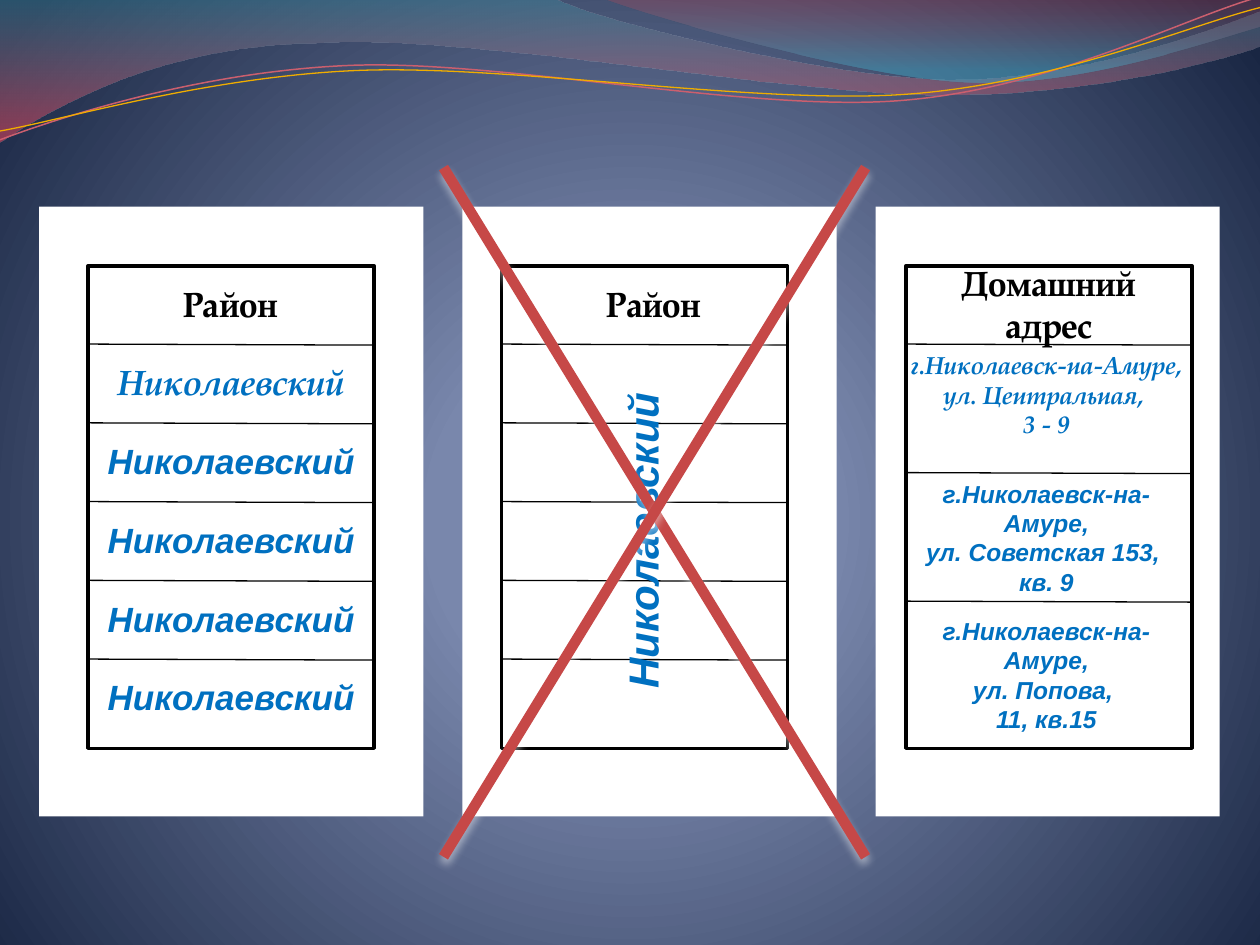
from typing import NamedTuple

import pptx
import pptx.dml.color
import pptx.enum.shapes
import pptx.enum.text
import pptx.oxml
import pptx.oxml.ns
import pptx.util

GRID_COLUMNS, GRID_ROWS = 100, 75
CELL = pptx.util.Inches(0.1)
SERIF, SANS = "TeX Gyre Pagella", "Arial"
BLACK, WHITE, BLUE, RED = "000000", "FFFFFF", "0070C0", "C64847"
DISTRICT = "Николаевский"
TABLE_TOP, TABLE_WIDTH, TABLE_HEIGHT = 21.1, 22.7, 38.3
ROW = 6.25
ADDRESS_ROW = 10.2
RULE_TILT = 0.04
DRAWING_NS = pptx.oxml.ns.nsdecls("a")


class Box(NamedTuple):
    left: float
    top: float
    width: float
    height: float


class Stop(NamedTuple):
    position: int
    color: str
    opacity: int = 100


class Wave(NamedTuple):
    start: tuple
    segments: list
    stops: tuple = ()
    line: str = ""
    weight: float = 0


class Label(NamedTuple):
    box: Box
    text: str
    font: str
    color: str
    size: int
    italic: bool = True
    rotation: int = 0


class Table(NamedTuple):
    left: float
    rules: list
    labels: list


WAVES = [
    Wave((0, -0.1), [
        (44, -0.1), (47.6, 1.7, 66.4, 6.3, 75.8, 6.3), (85.3, 6.3, 95.8, 2.6, 100, 0.9),
        (100.1, 3.6), (98.3, 4.4, 87, 7.6, 74.6, 7.5), (62.2, 7.5, 38.2, 2.8, 25.7, 3.4),
        (12.9, 3.5, 4.6, 8.3, -0.1, 11.3)],
        (Stop(0, "3F8A9F", 45), Stop(100, "EF445B", 55))),
    Wave((47.9, -0.1), [
        (50.9, 1.1, 68.2, 6.2, 76.9, 6.5), (85.6, 6.9, 96.1, 3.2, 100, 2.1), (100, 0)],
        (Stop(0, "B84253", 30), Stop(80, "42ABC7", 45))),
    Wave((0, 11.1), [
        (4.8, 9.3, 15.8, 5.7, 27.7, 5.2), (39.5, 4.7, 59.3, 8.9, 71.3, 8),
        (83.3, 7.1, 93.8, 1.5, 99.8, -0.2)], line="CB5F6E", weight=0.85),
    Wave((0, 10.4), [
        (4.7, 9.6, 16.4, 6.1, 28.3, 5.6), (40.3, 5.1, 59.7, 8.3, 71.7, 7.5),
        (83.6, 6.7, 94.1, 2.1, 100, 0.6)], line="F0AD00", weight=0.75),
]

CARDS = [Box(left, 16.4, width, 48.4) for left, width in ((3.1, 30.5), (36.7, 29.7), (69.5, 27.3))]

DISTRICT_RULES = [TABLE_TOP + ROW * row for row in range(1, 6)]
ADDRESS_RULES = [TABLE_TOP + ROW + ADDRESS_ROW * row for row in range(3)]


def row_box(left: float, row: int) -> Box:
    return Box(left, TABLE_TOP + 0.8 + ROW * row, TABLE_WIDTH, 4.4)


def heading(box: Box, text: str) -> Label:
    return Label(box, text, SERIF, BLACK, 20, False)


ADDRESSES = [
    (27.3, SERIF, "г.Николаевск-на-Амуре,\nул. Центральная, \n3 - 9"),
    (37.5, SANS, "г.Николаевск-на-Амуре,\nул. Советская 153, \nкв. 9"),
    (48.4, SANS, "г.Николаевск-на-Амуре,\nул. Попова, \n11, кв.15"),
]

REPEATED_DISTRICT = Table(7, DISTRICT_RULES, [heading(Box(10.9, 21.9, 14.8, 4.4), "Район")] + [
    Label(row_box(7, row), DISTRICT, SERIF if row == 1 else SANS, BLUE, 20)
    for row in range(1, 6)])
MERGED_DISTRICT = Table(39.8, DISTRICT_RULES, [
    heading(Box(43.7, 21.9, 16.4, 4.4), "Район"),
    Label(Box(36.1, 40.4, 29.7, 5), DISTRICT, SANS, BLUE, 24, rotation=270)])
HOME_ADDRESS = Table(71.9, ADDRESS_RULES, [
    heading(Box(71.9, 20.3, TABLE_WIDTH, 7.7), "Домашний адрес")] + [
    Label(Box(71.1, top, 23.9, 10.4), text, font, BLUE, 14)
    for top, font, text in ADDRESSES])


def grid(cells: float) -> pptx.util.Emu:
    return pptx.util.Emu(round(cells * CELL))


def rgb(color: str) -> pptx.dml.color.RGBColor:
    return pptx.dml.color.RGBColor.from_string(color)


def set_line(line, color: str, weight: float) -> None:
    line.color.rgb = rgb(color)
    line.width = pptx.util.Pt(weight)


def set_gradient(fill, owner, stops: tuple, direction: str) -> None:
    fill.gradient()
    stop_xml = "".join(
        f'<a:gs pos="{stop.position * 1000}"><a:srgbClr val="{stop.color}">'
        f'<a:alpha val="{stop.opacity * 1000}"/></a:srgbClr></a:gs>' for stop in stops)
    gradient = pptx.oxml.parse_xml(
        f'<a:gradFill {DRAWING_NS} rotWithShape="1"><a:gsLst>{stop_xml}</a:gsLst>{direction}</a:gradFill>')
    plain = owner.find(".//" + pptx.oxml.ns.qn("a:gradFill"))
    plain.getparent().replace(plain, gradient)


def bend_segments(ribbon, segments: list) -> None:
    steps = iter(ribbon.element.findall(".//" + pptx.oxml.ns.qn("a:lnTo")))
    for segment in segments:
        first = next(steps)
        if len(segment) == 6:
            curve = pptx.oxml.parse_xml(f"<a:cubicBezTo {DRAWING_NS}/>")
            first.addprevious(curve)
            for step in (first, next(steps), next(steps)):
                curve.append(step[0])
                step.getparent().remove(step)


def draw_wave(shapes, wave: Wave) -> None:
    points = [(grid(segment[i]), grid(segment[i + 1]))
              for segment in wave.segments for i in range(0, len(segment), 2)]
    builder = shapes.build_freeform(*map(grid, wave.start))
    builder.add_line_segments(points, close=bool(wave.stops))
    ribbon = builder.convert_to_shape()
    bend_segments(ribbon, wave.segments)
    ribbon.shadow.inherit = False
    if wave.stops:
        set_gradient(ribbon.fill, ribbon.element, wave.stops, '<a:lin ang="5400000" scaled="0"/>')
        ribbon.line.fill.background()
    else:
        ribbon.fill.background()
        set_line(ribbon.line, wave.line, wave.weight)


def draw_panel(shapes, box: Box, border: float = 0) -> None:
    panel = shapes.add_shape(pptx.enum.shapes.MSO_SHAPE.RECTANGLE, *map(grid, box))
    panel.shadow.inherit = False
    panel.fill.solid()
    panel.fill.fore_color.rgb = rgb(WHITE)
    if border:
        set_line(panel.line, BLACK, border)
    else:
        panel.line.fill.background()


def draw_line(shapes, ends: tuple, color: str, weight: float, effect: str = "") -> None:
    line = shapes.add_connector(pptx.enum.shapes.MSO_CONNECTOR.STRAIGHT, *map(grid, ends))
    set_line(line.line, color, weight)
    line.element.spPr.append(pptx.oxml.parse_xml(f"<a:effectLst {DRAWING_NS}>{effect}</a:effectLst>"))


def draw_label(shapes, label: Label) -> None:
    caption = shapes.add_textbox(*map(grid, label.box))
    caption.rotation = label.rotation
    frame = caption.text_frame
    frame.word_wrap = True
    frame.auto_size = pptx.enum.text.MSO_AUTO_SIZE.SHAPE_TO_FIT_TEXT
    frame.text = label.text
    for paragraph in frame.paragraphs:
        paragraph.alignment = pptx.enum.text.PP_ALIGN.CENTER
        for run in paragraph.runs:
            run.font.name = label.font
            run.font.size = pptx.util.Pt(label.size)
            run.font.bold = True
            run.font.italic = label.italic
            run.font.color.rgb = rgb(label.color)


def draw_table(shapes, table: Table) -> None:
    draw_panel(shapes, Box(table.left, TABLE_TOP, TABLE_WIDTH, TABLE_HEIGHT), 2)
    for rule in table.rules:
        ends = (table.left, rule - RULE_TILT, table.left + TABLE_WIDTH, rule + RULE_TILT)
        draw_line(shapes, ends, BLACK, 0.75)
    for label in table.labels:
        draw_label(shapes, label)


def draw_cross(shapes) -> None:
    shadow = ('<a:outerShdw blurRad="57150" dist="38100" dir="5400000" rotWithShape="0">'
              f'<a:srgbClr val="{WHITE}"><a:alpha val="48000"/></a:srgbClr></a:outerShdw>')
    for start, end in ((13.3, 68), (68, 13.3)):
        draw_line(shapes, (35.2, start, 68.7, end), RED, 6, shadow)


def main() -> None:
    deck = pptx.Presentation()
    deck.slide_width, deck.slide_height = grid(GRID_COLUMNS), grid(GRID_ROWS)
    slide = deck.slides.add_slide(deck.slide_layouts[6])
    set_gradient(
        slide.background.fill, slide.element,
        (Stop(0, "7B8BB6"), Stop(25, "7987AC"), Stop(100, "192643")),
        '<a:path path="circle"><a:fillToRect l="10000" t="110000" r="10000" b="100000"/></a:path>')
    for wave in WAVES:
        draw_wave(slide.shapes, wave)
    for card in CARDS:
        draw_panel(slide.shapes, card)
    draw_table(slide.shapes, REPEATED_DISTRICT)
    draw_table(slide.shapes, MERGED_DISTRICT)
    draw_cross(slide.shapes)
    draw_table(slide.shapes, HOME_ADDRESS)
    deck.save("out.pptx")


if __name__ == "__main__":
    main()
